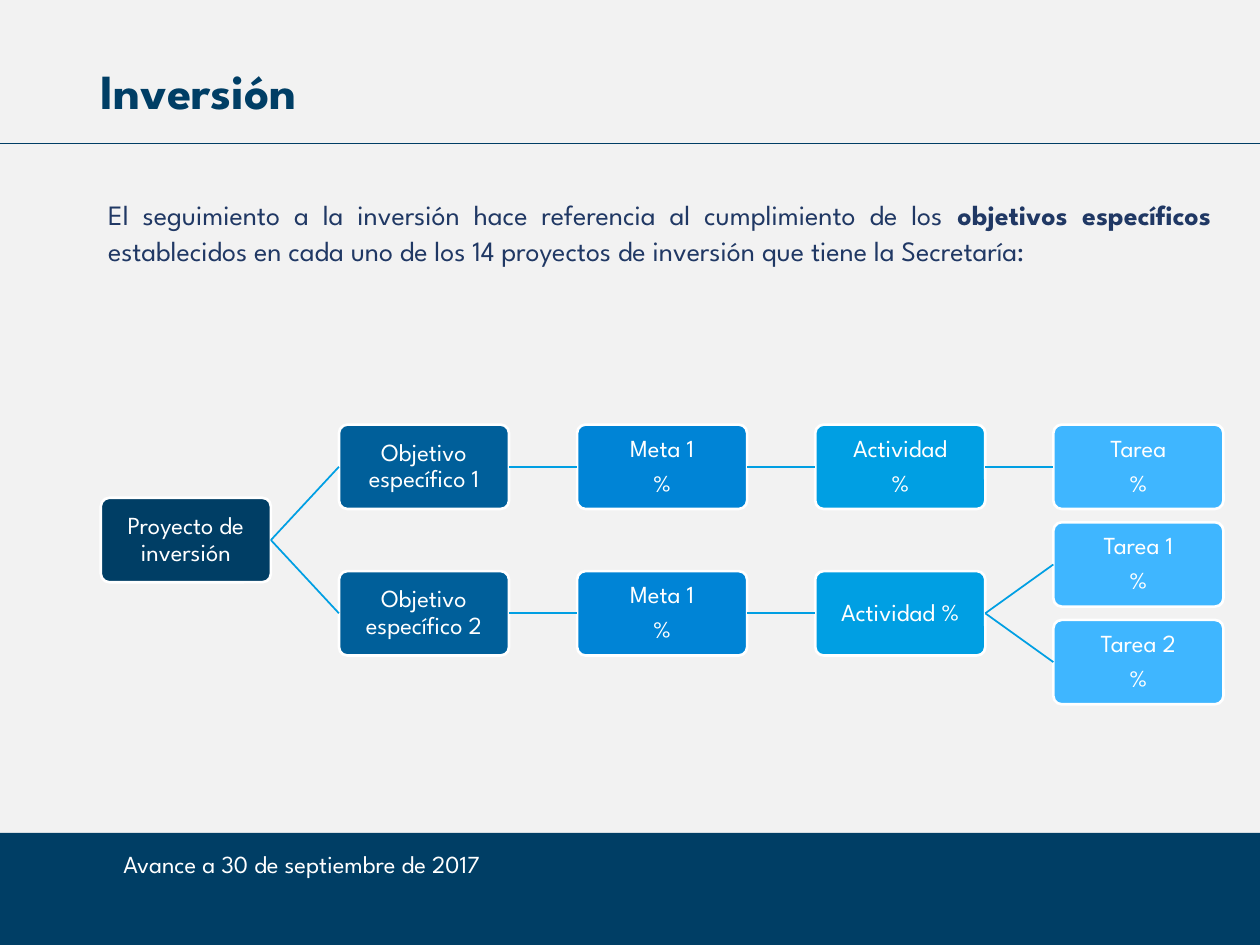
from pptx import Presentation
from pptx.dml.color import RGBColor
from pptx.enum.shapes import MSO_CONNECTOR as Connector, MSO_SHAPE as Shape
from pptx.enum.text import MSO_ANCHOR as Anchor, PP_ALIGN as Align
from pptx.util import Inches, Pt
from lxml.etree import SubElement
from pptx.oxml.ns import qn

COLORS = {
    "background": "F2F2F2",
    "navy": "003E65",
    "objective": "005F9A",
    "goal": "0084D6",
    "activity": "009FE3",
    "task": "3FB6FF",
    "body": "203864",
    "white": "FFFFFF",
}
LEVEL_COLORS = ["navy", "objective", "goal", "activity", "task"]

TREE_LEFT, TREE_TOP = 0.8, 3.37
LEVEL_STEP, ROW_STEP = 1.89, 0.775
BOX_WIDTH, BOX_HEIGHT = 1.35, 0.67

PROJECT_TREE = ("Proyecto de inversión", 0.75, [
    ("Objetivo específico 1", 0, [
        ("Meta 1\n%", 0, [
            ("Actividad\n%", 0, [
                ("Tarea\n%", 0, []),
            ]),
        ]),
    ]),
    ("Objetivo específico 2", 1.5, [
        ("Meta 1\n%", 1.5, [
            ("Actividad %", 1.5, [
                ("Tarea 1\n%", 1, []),
                ("Tarea 2\n%", 2, []),
            ]),
        ]),
    ]),
])


class SlideBuilder:
    font_name = "League Spartan"

    def __init__(self, presentation):
        self.slide = presentation.slides.add_slide(presentation.slide_layouts[5])
        fill = self.slide.background.fill
        fill.solid()
        fill.fore_color.rgb = self.color("background")

    def color(self, name):
        return RGBColor.from_string(COLORS[name])

    def format_run(self, run, size, color, bold=False):
        run.font.name = self.font_name
        run.font.size = Pt(size)
        run.font.bold = bold
        run.font.color.rgb = self.color(color)

    def title(self, text, left, top, width, height):
        shape = self.slide.shapes.title
        shape.left, shape.top = Inches(left), Inches(top)
        shape.width, shape.height = Inches(width), Inches(height)
        shape.text_frame.text = text
        shape.text_frame.vertical_anchor = Anchor.MIDDLE
        paragraph = shape.text_frame.paragraphs[0]
        paragraph.alignment = Align.LEFT
        self.format_run(paragraph.runs[0], 28, "navy", True)

    def text(self, parts, left, top, width, height, size, color,
             align=Align.LEFT, line_spacing=1.0):
        shape = self.slide.shapes.add_textbox(
            Inches(left), Inches(top), Inches(width), Inches(height))
        shape.text_frame.word_wrap = True
        paragraph = shape.text_frame.paragraphs[0]
        paragraph.alignment = align
        paragraph.line_spacing = line_spacing
        for content, bold in parts:
            run = paragraph.add_run()
            run.text = content
            self.format_run(run, size, color, bold)

    def box(self, kind, left, top, width, height, color):
        shape = self.slide.shapes.add_shape(
            kind, Inches(left), Inches(top), Inches(width), Inches(height))
        shape.shadow.inherit = False
        shape.fill.solid()
        shape.fill.fore_color.rgb = self.color(color)
        shape.line.fill.background()
        return shape

    def node(self, text, left, top, color):
        shape = self.box(Shape.ROUNDED_RECTANGLE, left, top, BOX_WIDTH, BOX_HEIGHT, color)
        shape.adjustments[0] = 0.1
        shape.line.color.rgb = self.color("white")
        shape.line.width = Pt(1.5)
        frame = shape.text_frame
        frame.word_wrap = True
        frame.vertical_anchor = Anchor.MIDDLE
        frame.margin_left = frame.margin_right = Inches(0.03)
        frame.margin_top = frame.margin_bottom = Inches(0.03)
        frame.text = text
        for paragraph in frame.paragraphs:
            paragraph.alignment = Align.CENTER
            paragraph.line_spacing = 0.9
            paragraph.space_after = Pt(5)
            self.format_run(paragraph.runs[0], 14, "white")
        return shape

    def line(self, start, end, color):
        connector = self.slide.shapes.add_connector(
            Connector.STRAIGHT, *(Inches(value) for value in start + end))
        connector.line.color.rgb = self.color(color)
        connector.line.width = Pt(1)
        SubElement(connector._element.spPr, qn("a:effectLst"))
        return connector

    def tree(self, branch, level=0):
        text, row, children = branch
        parent = self.node(text, TREE_LEFT + level * LEVEL_STEP,
                           TREE_TOP + row * ROW_STEP, LEVEL_COLORS[level])
        for child_branch in children:
            child = self.tree(child_branch, level + 1)
            connector = self.line((0, 0), (1, 1), "activity")
            connector.begin_connect(parent, 3)
            connector.end_connect(child, 1)
        return parent


def main():
    presentation = Presentation()
    presentation.slide_width, presentation.slide_height = Inches(10), Inches(7.5)
    builder = SlideBuilder(presentation)
    builder.box(Shape.RECTANGLE, 0, 6.61, 10, 0.89, "navy")
    builder.text([("Avance a 30 de septiembre de 2017", False)],
                 0.88, 6.69, 3.65, 0.4, 14, "white")
    builder.title("Inversión", 0.7, 0.38, 8.62, 0.67)
    builder.line((10, 1.14), (0, 1.14), "navy")
    builder.tree(PROJECT_TREE)
    builder.text([
        ("El seguimiento a la inversión hace referencia al cumplimiento de los ", False),
        ("objetivos específicos ", True),
        ("establecidos en cada uno de los 14 proyectos de inversión "
         "que tiene la Secretaría:", False),
    ], 0.76, 1.5, 8.95, 0.97, 16, "body", Align.JUSTIFY, 1.07)
    presentation.save("out.pptx")


if __name__ == "__main__":
    main()
